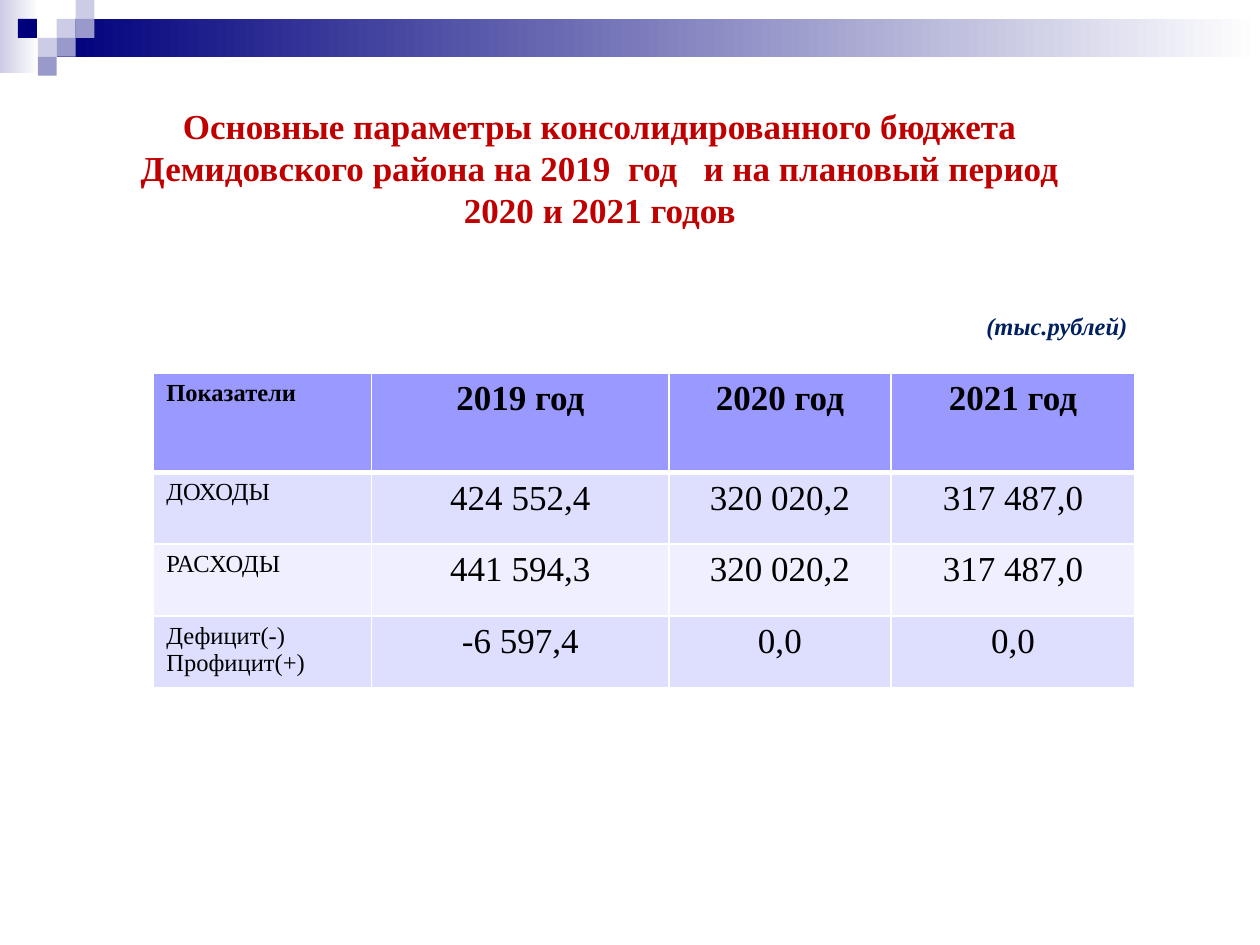
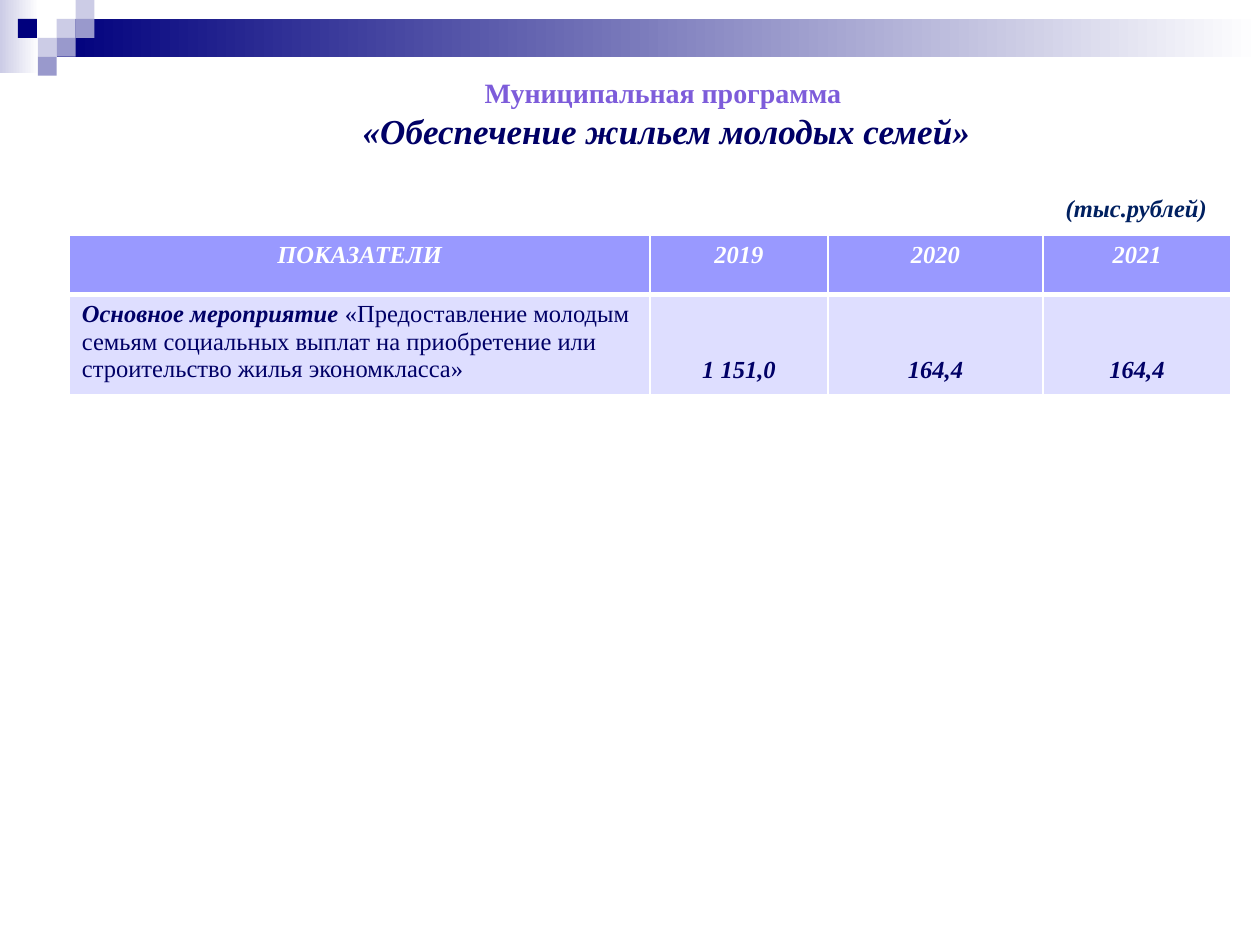
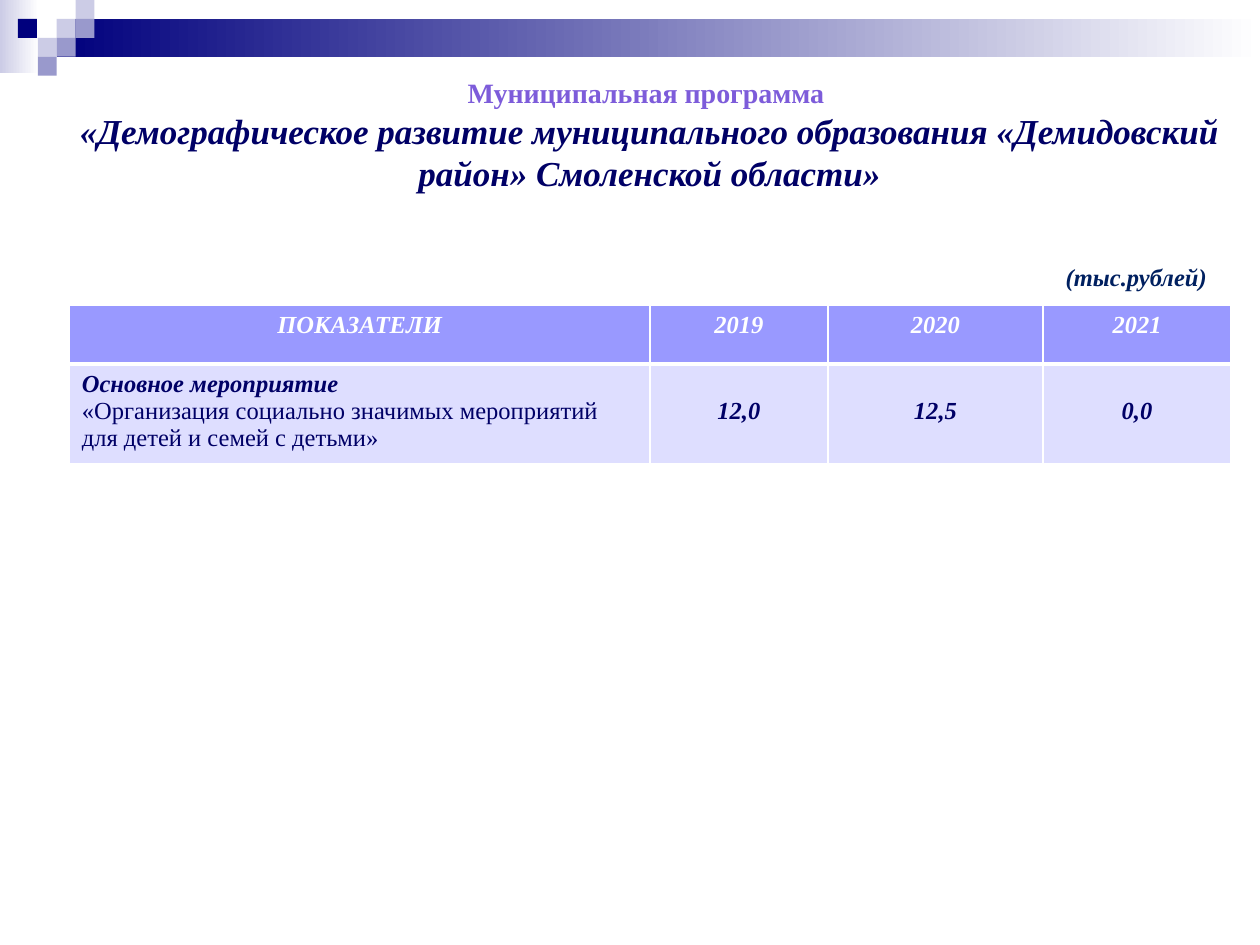
"""Builds three budget slides for the Демидовский район."""
import dataclasses

import pptx
import pptx.dml.color
import pptx.enum.shapes
import pptx.enum.text
import pptx.oxml
import pptx.oxml.ns
import pptx.util

Inches = pptx.util.Inches
RGBColor = pptx.dml.color.RGBColor
ALIGN = pptx.enum.text.PP_ALIGN
ANCHOR = pptx.enum.text.MSO_ANCHOR

FONT = "Times New Roman"
WHITE = RGBColor(0xFF, 0xFF, 0xFF)
BLACK = RGBColor(0x00, 0x00, 0x00)
NAVY = RGBColor(0x00, 0x00, 0x7D)
LAVENDER = RGBColor(0xCC, 0xCC, 0xE6)
PERIWINKLE = RGBColor(0x99, 0x99, 0xCC)
RED = RGBColor(0xC0, 0x00, 0x00)
VIOLET = RGBColor(0x7D, 0x5C, 0xDA)
INK = RGBColor(0x00, 0x00, 0x66)
UNIT_BLUE = RGBColor(0x00, 0x20, 0x60)
HEADER_FILL = RGBColor(0x99, 0x99, 0xFF)
ROW_FILLS = [RGBColor(0xDE, 0xDE, 0xFF), RGBColor(0xEF, 0xEF, 0xFF)]


@dataclasses.dataclass(frozen=True)
class TextStyle:
    """Look of one run of text."""
    size: int
    color: RGBColor
    bold: bool = False
    italic: bool = False


HEADING = TextStyle(20, RED, bold=True)
PROGRAM_LABEL = TextStyle(16, VIOLET, bold=True)
PROGRAM_NAME = TextStyle(20, INK, bold=True, italic=True)
UNIT = TextStyle(14, UNIT_BLUE, bold=True, italic=True)
PROGRAM_HEADER = TextStyle(14, WHITE, bold=True, italic=True)
ACTIVITY = TextStyle(14, INK)
ACTIVITY_STRONG = TextStyle(14, INK, bold=True, italic=True)

BUDGET_COLUMNS = [1.73, 2.36, 1.76, 1.94]
BUDGET_ROWS = [0.79, 0.57, 0.57, 0.57]
BUDGET = [
    ["Показатели", "2019 год", "2020 год", "2021 год"],
    ["ДОХОДЫ", "424 552,4", "320 020,2", "317 487,0"],
    ["РАСХОДЫ", "441 594,3", "320 020,2", "317 487,0"],
    ["Дефицит(-)\nПрофицит(+)", "-6 597,4", "0,0", "0,0"],
]
PROGRAM_COLUMNS = [4.61, 1.41, 1.71, 1.49]
PROGRAM_ROWS = [0.47, 0.79]
PROGRAM_TITLES = ["ПОКАЗАТЕЛИ", "2019", "2020", "2021"]


def write(frame, paragraphs, align):
    """Fill a text frame with paragraphs, each a list of (text, style) runs."""
    for index, pieces in enumerate(paragraphs):
        paragraph = frame.add_paragraph() if index else frame.paragraphs[0]
        paragraph.alignment = align
        for text, style in pieces:
            run = paragraph.add_run()
            run.text = text
            run.font.name = FONT
            run.font.size = pptx.util.Pt(style.size)
            run.font.bold = style.bold
            run.font.italic = style.italic
            run.font.color.rgb = style.color


def add_block(slide, left, top, width, height, color, fade=False):
    """Add a borderless rectangle, fading to white on the right if asked."""
    block = slide.shapes.add_shape(
        pptx.enum.shapes.MSO_SHAPE.RECTANGLE,
        Inches(left), Inches(top), Inches(width), Inches(height))
    block.shadow.inherit = False
    block.line.fill.background()
    if fade:
        block.fill.gradient()
        block.fill.gradient_angle = 0
        start, end = block.fill.gradient_stops
        start.color.rgb, start.position = color, 0
        end.color.rgb, end.position = WHITE, 1
    else:
        block.fill.solid()
        block.fill.fore_color.rgb = color
    return block


def decorate_master(master, slide):
    """Draw the top band and its mosaic, then move them behind everything."""
    side = 0.15
    mosaic = [(3, 1, LAVENDER), (4, 0, LAVENDER), (4, 1, PERIWINKLE),
              (2, 2, LAVENDER), (0.95, 1, NAVY), (3, 2, PERIWINKLE),
              (2, 3, PERIWINKLE)]
    blocks = [add_block(slide, 0, 0, 0.31, 0.58, LAVENDER, fade=True),
              add_block(slide, 3 * side, side, 9.55, 2 * side, NAVY, fade=True)]
    blocks += [add_block(slide, column * side, row * side, side, side, color)
               for column, row, color in mosaic]
    tree = master.element.cSld.spTree
    for position, block in enumerate(blocks, start=2):
        tree.insert(position, block.element)


def set_title(slide, box, paragraphs, anchor, side_inset):
    """Place the title placeholder in its box and write its paragraphs."""
    title = slide.shapes.title
    title.left, title.top, title.width, title.height = map(Inches, box)
    frame = title.text_frame
    frame.auto_size = pptx.enum.text.MSO_AUTO_SIZE.NONE
    frame.vertical_anchor = anchor
    frame.margin_left = frame.margin_right = Inches(side_inset)
    write(frame, paragraphs, ALIGN.CENTER)


def add_unit(slide, left, top):
    """Add the note on the unit of measure."""
    note = slide.shapes.add_textbox(
        Inches(left), Inches(top), Inches(1.33), Inches(0.34))
    note.text_frame.word_wrap = False
    write(note.text_frame, [[("(тыс.рублей)", UNIT)]], ALIGN.LEFT)


def set_borders(cell, bottom, top):
    """Give a cell white borders with the given top and bottom widths."""
    properties = cell._tc.get_or_add_tcPr()
    for index, (edge, points) in enumerate(
            [("L", 1), ("R", 1), ("T", top), ("B", bottom)]):
        properties.insert(index, pptx.oxml.parse_xml(
            f'<a:ln{edge} {pptx.oxml.ns.nsdecls("a")} w="{pptx.util.Pt(points)}">'
            f'<a:solidFill><a:srgbClr val="{WHITE}"/></a:solidFill></a:ln{edge}>'))


def add_grid(slide, left, top, columns, rows):
    """Add a table with a header row and striped rows, and return it."""
    grid = slide.shapes.add_table(
        len(rows), len(columns), Inches(left), Inches(top),
        Inches(sum(columns)), Inches(sum(rows))).table
    for column, width in zip(grid.columns, columns):
        column.width = Inches(width)
    for index, (row, height) in enumerate(zip(grid.rows, rows)):
        row.height = Inches(height)
        for cell in row.cells:
            cell.fill.solid()
            cell.fill.fore_color.rgb = (
                ROW_FILLS[(index - 1) % 2] if index else HEADER_FILL)
            set_borders(cell, bottom=1 if index else 3, top=3 if index == 1 else 1)
    return grid


def add_budget_table(slide, left, top):
    """Add the table of income, spending and balance."""
    grid = add_grid(slide, left, top, BUDGET_COLUMNS, BUDGET_ROWS)
    for row, values in enumerate(BUDGET):
        for column, value in enumerate(values):
            style = TextStyle(20 if column else 14, BLACK, bold=row == 0)
            write(grid.cell(row, column).text_frame,
                  [[(line, style)] for line in value.split("\n")],
                  ALIGN.CENTER if column else ALIGN.LEFT)


def add_program_table(slide, left, top, activity, amounts, amount_inset):
    """Add the table of one activity and its yearly amounts."""
    grid = add_grid(slide, left, top, PROGRAM_COLUMNS, PROGRAM_ROWS)
    for column, heading in enumerate(PROGRAM_TITLES):
        write(grid.cell(0, column).text_frame,
              [[(heading, PROGRAM_HEADER)]], ALIGN.CENTER)
    write(grid.cell(1, 0).text_frame, activity, ALIGN.LEFT)
    for column, amount in enumerate(amounts, start=1):
        cell = grid.cell(1, column)
        cell.margin_top = Inches(amount_inset)
        write(cell.text_frame, [[(amount, ACTIVITY_STRONG)]], ALIGN.CENTER)


def build_budget_slide(slide):
    """Build the slide with the main budget figures."""
    lines = ["Основные параметры консолидированного бюджета",
             "Демидовского района на 2019  год   и на плановый период "
             "2020 и 2021 годов"]
    set_title(slide, (0.94, 0.55, 7.64, 1.33),
              [[(line, HEADING)] for line in lines], ANCHOR.BOTTOM, 0)
    add_budget_table(slide, 1.22, 2.96)
    add_unit(slide, 7.73, 2.42)


def build_program_slide(slide, title_box, name, table_top, activity, amounts,
                        amount_inset):
    """Build the slide of one municipal programme."""
    set_title(slide, title_box,
              [[("Муниципальная программа ", PROGRAM_LABEL)],
               [(name, PROGRAM_NAME)]], ANCHOR.TOP, 0.1)
    add_program_table(slide, 0.55, table_top, activity, amounts, amount_inset)
    add_unit(slide, 8.36, table_top - 0.39)


def main():
    """Build and save the presentation."""
    deck = pptx.Presentation()
    deck.slide_width, deck.slide_height = Inches(10), Inches(7.5)
    title_only = deck.slide_layouts[5]
    budget, housing, family = [deck.slides.add_slide(title_only) for _ in range(3)]
    decorate_master(deck.slide_master, budget)
    build_budget_slide(budget)
    build_program_slide(
        housing, (1.56, 0.55, 7.46, 0.71),
        "«Обеспечение жильем молодых семей»", 1.87,
        [[("Основное мероприятие ", ACTIVITY_STRONG),
          ("«Предоставление молодым семьям социальных выплат на приобретение "
           "или строительство жилья экономкласса»", ACTIVITY)]],
        ["1 151,0", "164,4", "164,4"], 0.49)
    build_program_slide(
        family, (0.31, 0.55, 9.69, 1.04),
        "«Демографическое развитие муниципального образования "
        "«Демидовский район» Смоленской области»", 2.42,
        [[("Основное мероприятие", ACTIVITY_STRONG)],
         [("«Организация социально значимых мероприятий для детей и семей "
           "с детьми»", ACTIVITY)]],
        ["12,0", "12,5", "0,0"], 0.27)
    deck.save("out.pptx")


if __name__ == "__main__":
    main()
